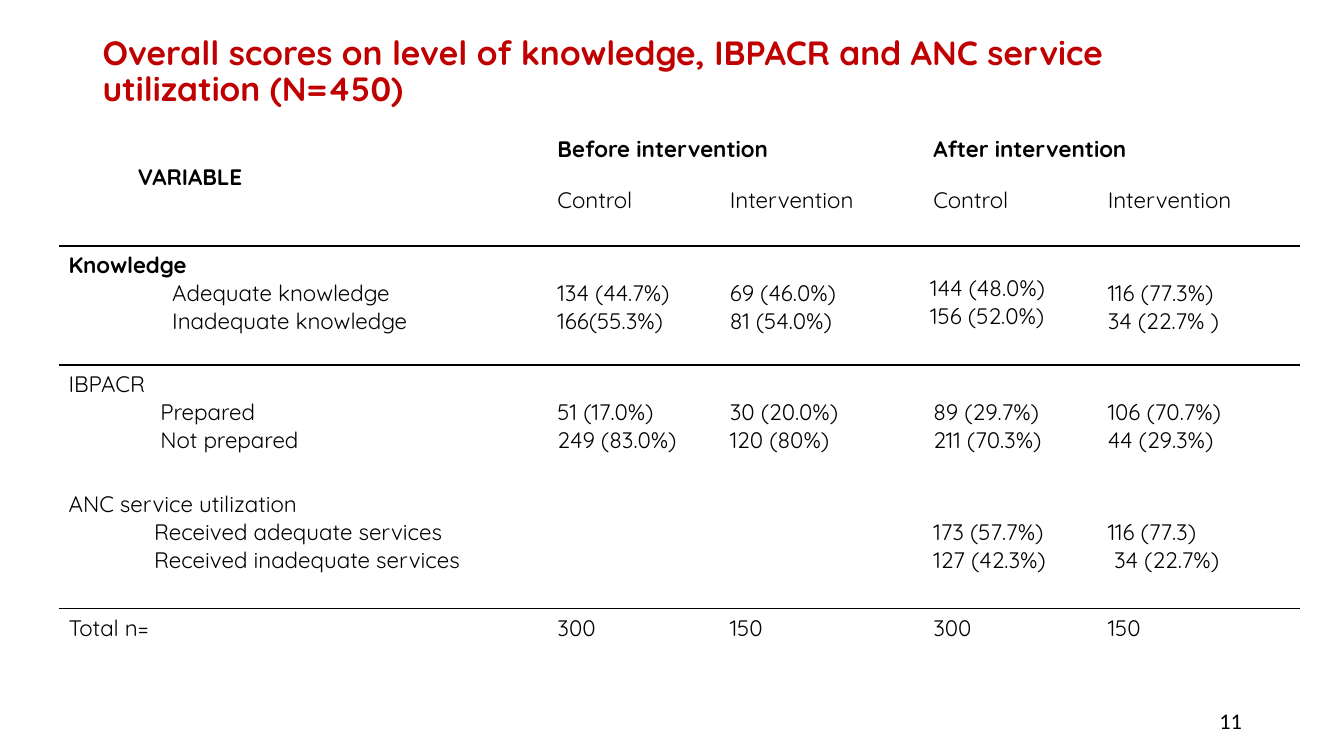
"""Build the slide that compares scores before and after the intervention."""
from lxml import etree
from pptx import Presentation
from pptx import util as u
from pptx.enum import text
from pptx.oxml.ns import qn

COLORS = {"title": "C00000", "ink": "000000"}
FONT = "Quicksand"
TITLE = "Overall scores on level of knowledge, IBPACR and ANC service utilization (N=450)"
PERIODS = ["Before intervention", "After intervention"]
GROUPS = ["Control", "Intervention"] * 2
SECTIONS = [
    {"name": "Knowledge", "bold": True, "indent": 74,
     "levels": ["Adequate knowledge", "Inadequate knowledge"],
     "scores": [["134 (44.7%)", "166(55.3%)"], ["69 (46.0%)", "81 (54.0%)"],
                ["144 (48.0%)", "156 (52.0%)"], ["116 (77.3%)", "34 (22.7% )"]]},
    {"name": "IBPACR", "bold": False, "indent": 65.5,
     "levels": ["Prepared", "Not prepared"],
     "scores": [["51 (17.0%)", "249 (83.0%)"], ["30 (20.0%)", "120 (80%)"],
                ["89 (29.7%)", "211 (70.3%)"], ["106 (70.7%)", "44 (29.3%)"]]},
    {"name": "ANC service utilization", "bold": False, "indent": 61,
     "levels": ["Received adequate services", "Received inadequate services"],
     "scores": [[], [], ["173 (57.7%)", "127 (42.3%)"], ["116 (77.3)", "34 (22.7%)"]]},
]
TOTALS = ["Total n=", "300", "150", "300", "150"]
COLUMNS = [349.2, 123.1, 145.4, 124.6, 144.7]
ROWS = [36.7, 46.1, 85, 85.7, 88.6, 73.4]
TABLE_LEFT, TABLE_TOP = 41.8, 92.9
LINE, MARGIN = 20, 3.6
RULES = {2: 1.5, 5: 1}
PLAIN_STYLE = "{2D5ABB26-0587-4C30-8999-92F81FD0307C}"


def style(para, size=16, bold=False, color="ink", font=FONT):
    for span in para.runs:
        span.font.size = u.Pt(size)
        span.font.bold = bold
        span.font.name = font
        span.font.color.rgb = u_color(COLORS[color])


def u_color(value):
    return RGBColor.from_string(value)


def indent(para, points):
    props = para._p.get_or_add_pPr()
    props.set("marL", str(u.Pt(points)))
    props.set("indent", "0")


def fill_cell(cell, lines, bold=False, skip=0):
    cell.text_frame.text = "\n".join(lines)
    cell.margin_top = u.Pt(MARGIN + skip * LINE)
    for para in cell.text_frame.paragraphs:
        style(para, bold=bold)


def add_rule(cell, side, width):
    line = etree.Element(qn("a:" + side), w=str(u.Pt(width)))
    paint = etree.SubElement(line, qn("a:solidFill"))
    etree.SubElement(paint, qn("a:srgbClr"), val=COLORS["ink"])
    cell._tc.get_or_add_tcPr().insert(0, line)


def add_text(page, content, left, top, width, height):
    box = page.shapes.add_textbox(*map(u.Pt, (left, top, width, height)))
    box.text_frame.word_wrap = True
    box.text_frame.vertical_anchor = text.MSO_ANCHOR.MIDDLE
    box.text_frame.text = content
    return box.text_frame.paragraphs[0]


def add_scores(page):
    frame = page.shapes.add_table(
        len(ROWS), len(COLUMNS), u.Pt(TABLE_LEFT), u.Pt(TABLE_TOP),
        u.Pt(sum(COLUMNS)), u.Pt(sum(ROWS)))
    table = frame.table
    table.first_row = table.horz_banding = False
    table._tbl.tblPr.find(qn("a:tableStyleId")).text = PLAIN_STYLE
    for column, width in zip(table.columns, COLUMNS):
        column.width = u.Pt(width)
    for row, height in zip(table.rows, ROWS):
        row.height = u.Pt(height)
    for cell in table.iter_cells():
        cell.fill.background()

    variable = table.cell(0, 0)
    variable.merge(table.cell(1, 0))
    fill_cell(variable, ["VARIABLE"], bold=True, skip=1)
    variable.margin_bottom = 0
    indent(variable.text_frame.paragraphs[0], 49.5)
    for i, period in enumerate(PERIODS):
        start = table.cell(0, 1 + 2 * i)
        start.merge(table.cell(0, 2 + 2 * i))
        fill_cell(start, [period], bold=True)
    for column, group in enumerate(GROUPS, 1):
        fill_cell(table.cell(1, column), [group])

    for row, section in enumerate(SECTIONS, 2):
        label = table.cell(row, 0)
        fill_cell(label, [section["name"], *section["levels"]])
        heading, *levels = label.text_frame.paragraphs
        style(heading, bold=section["bold"])
        for para in levels:
            indent(para, section["indent"])
        for column, scores in enumerate(section["scores"], 1):
            if scores:
                fill_cell(table.cell(row, column), scores, skip=1)
    for column, total in enumerate(TOTALS):
        fill_cell(table.cell(5, column), [total])

    raised = table.cell(2, 3)
    raised.margin_top = u.Pt(LINE)
    raised.margin_left = raised.margin_right = u.Pt(5)
    indent(table.cell(4, 4).text_frame.paragraphs[1], 4.5)
    for row, width in RULES.items():
        for column in range(len(COLUMNS)):
            add_rule(table.cell(row - 1, column), "lnB", width)
            add_rule(table.cell(row, column), "lnT", width)


def main():
    deck = Presentation()
    deck.slide_width, deck.slide_height = u.Pt(960), u.Pt(540)
    page = deck.slides.add_slide(deck.slide_layouts[6])
    title = add_text(page, TITLE, 66.2, 14.4, 828, 74.9)
    title.line_spacing = 0.9
    style(title, size=24, bold=True, color="title")
    add_scores(page)
    number = add_text(page, "11", 678.2, 500.4, 216, 28.8)
    number.alignment = text.PP_ALIGN.RIGHT
    style(number, font="Calibri")
    deck.save("out.pptx")


from pptx.dml.color import RGBColor

if __name__ == "__main__":
    main()
